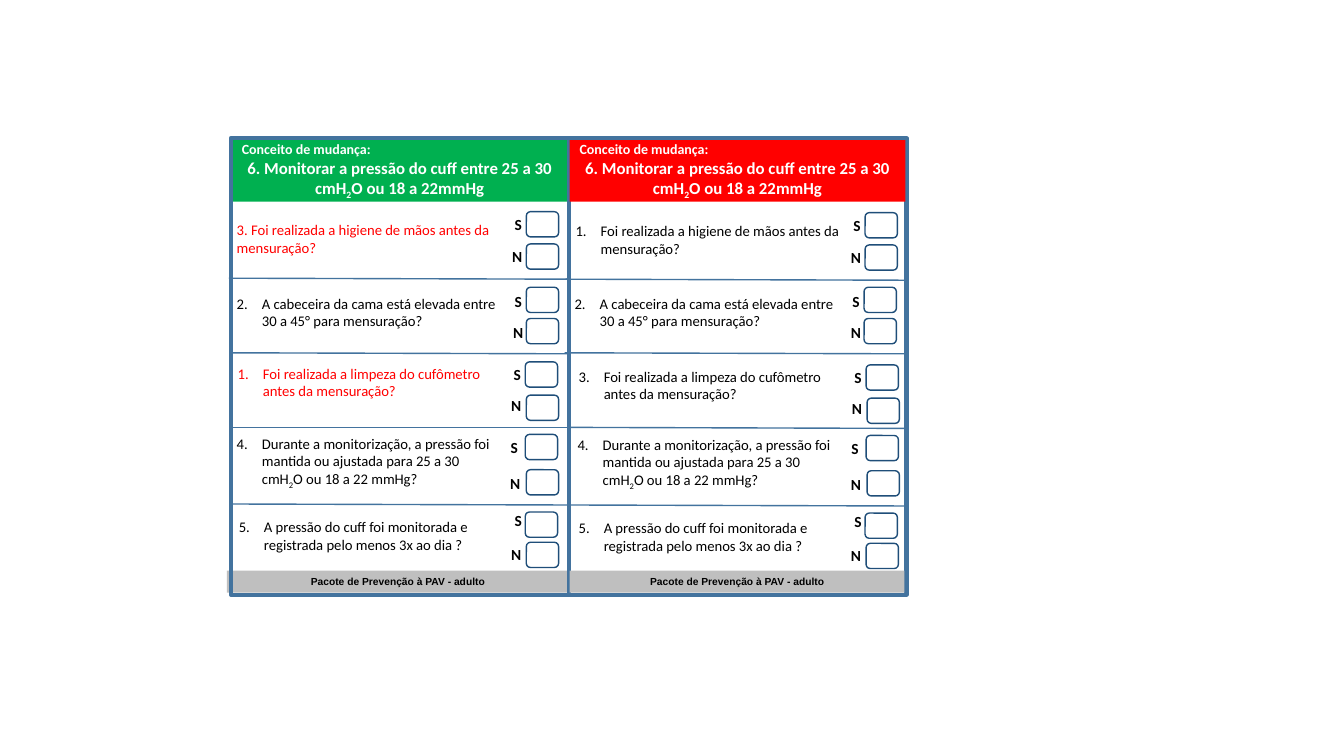
from lxml.etree import SubElement
from pptx import Presentation
from pptx.dml.color import RGBColor
from pptx.enum.shapes import MSO_CONNECTOR, MSO_SHAPE
from pptx.enum.text import MSO_ANCHOR, PP_ALIGN
from pptx.oxml.ns import qn
from pptx.util import Emu, Pt

EMU_PER_PX = 9144
INDENT = 25


def px(length):
    return Emu(length * EMU_PER_PX)


def colour(hex_string):
    return RGBColor.from_string(hex_string)


class Checklist:
    FRAME = "43739E"
    TICK = "1F4E79"
    FOOTER = "BFBFBF"
    BLACK = "000000"
    WHITE = "FFFFFF"
    RED = "FF0000"
    GREEN = "00B050"

    def __init__(self, slide):
        self.slide = slide

    def outline(self, kind, box, fill=None, line=None, weight=1):
        shape = self.slide.shapes.add_shape(kind, *map(px, box))
        shape.shadow.inherit = False
        if fill:
            shape.fill.solid()
            shape.fill.fore_color.rgb = colour(fill)
        else:
            shape.fill.background()
        if line:
            shape.line.color.rgb = colour(line)
            shape.line.width = Pt(weight)
        else:
            shape.line.fill.background()
        return shape

    def set_text(self, paragraph, text, size, ink, bold=False, font="Calibri",
                 align=PP_ALIGN.LEFT):
        pieces = text.split("|")
        paragraph.text = pieces[0]
        for piece in pieces[1:]:
            paragraph.add_run().text = piece
        paragraph.alignment = align
        for position, run in enumerate(paragraph.runs):
            run.font.size = Pt(size)
            run.font.name = font
            run.font.bold = bold
            run.font.color.rgb = colour(ink)
            if position % 2:
                run._r.get_or_add_rPr().set("baseline", "-25000")

    def number(self, paragraph, start):
        properties = paragraph._p.get_or_add_pPr()
        properties.set("marL", str(px(INDENT)))
        properties.set("indent", str(-px(INDENT)))
        SubElement(properties, qn("a:buFont"), typeface="Calibri")
        SubElement(properties, qn("a:buAutoNum"), type="arabicPeriod", startAt=str(start))

    def header(self, box, fill):
        frame = self.outline(MSO_SHAPE.RECTANGLE, box, fill).text_frame
        frame.word_wrap = True
        frame.vertical_anchor = MSO_ANCHOR.MIDDLE
        self.set_text(frame.paragraphs[0], "Conceito de mudança:", 10, self.WHITE, True)
        self.set_text(frame.add_paragraph(),
                      "6. Monitorar a pressão do cuff entre 25 a 30 cmH|2|O ou 18 a 22mmHg",
                      12, self.WHITE, True, align=PP_ALIGN.CENTER)

    def footer(self, box):
        frame = self.outline(MSO_SHAPE.RECTANGLE, box, self.FOOTER).text_frame
        frame.word_wrap = True
        frame.vertical_anchor = MSO_ANCHOR.TOP
        self.set_text(frame.paragraphs[0], "Pacote de Prevenção à PAV - adulto", 7.3,
                      self.BLACK, True, "Arial", PP_ALIGN.CENTER)

    def card(self, box):
        self.outline(MSO_SHAPE.RECTANGLE, box, line=self.FRAME, weight=3)

    def question(self, box, text, ink, start):
        frame = self.slide.shapes.add_textbox(*map(px, box)).text_frame
        frame.word_wrap = True
        frame.vertical_anchor = MSO_ANCHOR.MIDDLE
        self.set_text(frame.paragraphs[0], text, 10.5, ink)
        if start:
            self.number(frame.paragraphs[0], start)

    def answer(self, letter, letter_box, tick_box):
        self.outline(MSO_SHAPE.ROUNDED_RECTANGLE, tick_box, line=self.TICK)
        frame = self.slide.shapes.add_textbox(*map(px, letter_box)).text_frame
        frame.word_wrap = True
        frame.vertical_anchor = MSO_ANCHOR.MIDDLE
        frame.margin_left = frame.margin_right = 0
        frame.margin_top = frame.margin_bottom = 0
        self.set_text(frame.paragraphs[0], letter, 11, self.BLACK, True,
                      align=PP_ALIGN.CENTER)

    def divider(self, left, top, drop):
        line = self.slide.shapes.add_connector(
            MSO_CONNECTOR.STRAIGHT, px(left), px(top), px(left + 337), px(top + drop))
        line.line.color.rgb = colour(self.FRAME)
        line.line.width = Pt(1)
        SubElement(line._element.spPr, qn("a:effectLst"))


HYGIENE = "Foi realizada a higiene de mãos antes da mensuração?"
HEADBOARD = "A cabeceira da cama está elevada entre 30 a 45° para mensuração?"
CLEANING = "Foi realizada a limpeza do cufômetro antes da mensuração?"
PRESSURE = ("Durante a monitorização, a pressão foi mantida ou ajustada "
            "para 25 a 30 cmH|2|O ou 18 a 22 mmHg?")
RECORD = "A pressão do cuff foi monitorada e registrada pelo menos 3x ao dia ?"

ROWS = [
    (HYGIENE, (225, 202, 284, 69), (502, 214), (501, 246), (522, 210), (522, 242), (336, 1)),
    (HEADBOARD, (225, 277, 283, 65), (502, 290), (502, 322), (522, 285), (522, 316), (335, 0)),
    (CLEANING, (226, 342, 287, 74), (501, 362), (500, 394), (521, 359), (522, 392), (338, 3)),
    (PRESSURE, (225, 428, 284, 61), (498, 435), (499, 472), (521, 431), (522, 466), (338, 1)),
    (RECORD, (227, 507, 273, 49), (502, 507), (500, 542), (521, 508), (522, 538), (337, 1)),
]
LEFT_VARIANTS = {
    HYGIENE: ("3. " + HYGIENE, Checklist.RED, None),
    CLEANING: (CLEANING, Checklist.RED, 1),
}
DIVIDERS = [
    (227, 276, 1), (228, 350, 1), (228, 424, 0), (228, 500, 1),
    (561, 277, 1), (560, 350, 1), (563, 424, 1), (563, 501, 1),
]


def main():
    deck = Presentation()
    deck.slide_width, deck.slide_height = px(1333), px(750)
    checklist = Checklist(deck.slides.add_slide(deck.slide_layouts[6]))

    checklist.footer((225, 566, 339, 22))
    checklist.header((230, 139, 333, 61), Checklist.GREEN)
    for card_left in (229, 564):
        checklist.card((card_left, 137, 335, 453))
    checklist.footer((565, 566, 332, 22))
    checklist.header((565, 139, 333, 61), Checklist.RED)

    for divider in DIVIDERS:
        checklist.divider(*divider)

    for number, (text, place, yes, no, yes_tick, no_tick, shift) in enumerate(ROWS, 1):
        plain = (text, Checklist.BLACK, number)
        for (dx, dy), wording in (((0, 0), LEFT_VARIANTS.get(text, plain)), (shift, plain)):
            left, top, width, height = place
            checklist.question((left + dx, top + dy, width, height), *wording)
            for letter, (x, y), (tick_x, tick_y), letter_height in (
                    ("S", yes, yes_tick, 18), ("N", no, no_tick, 16)):
                checklist.answer(letter, (x + dx, y + dy, 24, letter_height),
                                 (tick_x + dx, tick_y + dy, 32, 25))

    deck.save("out.pptx")


if __name__ == "__main__":
    main()
